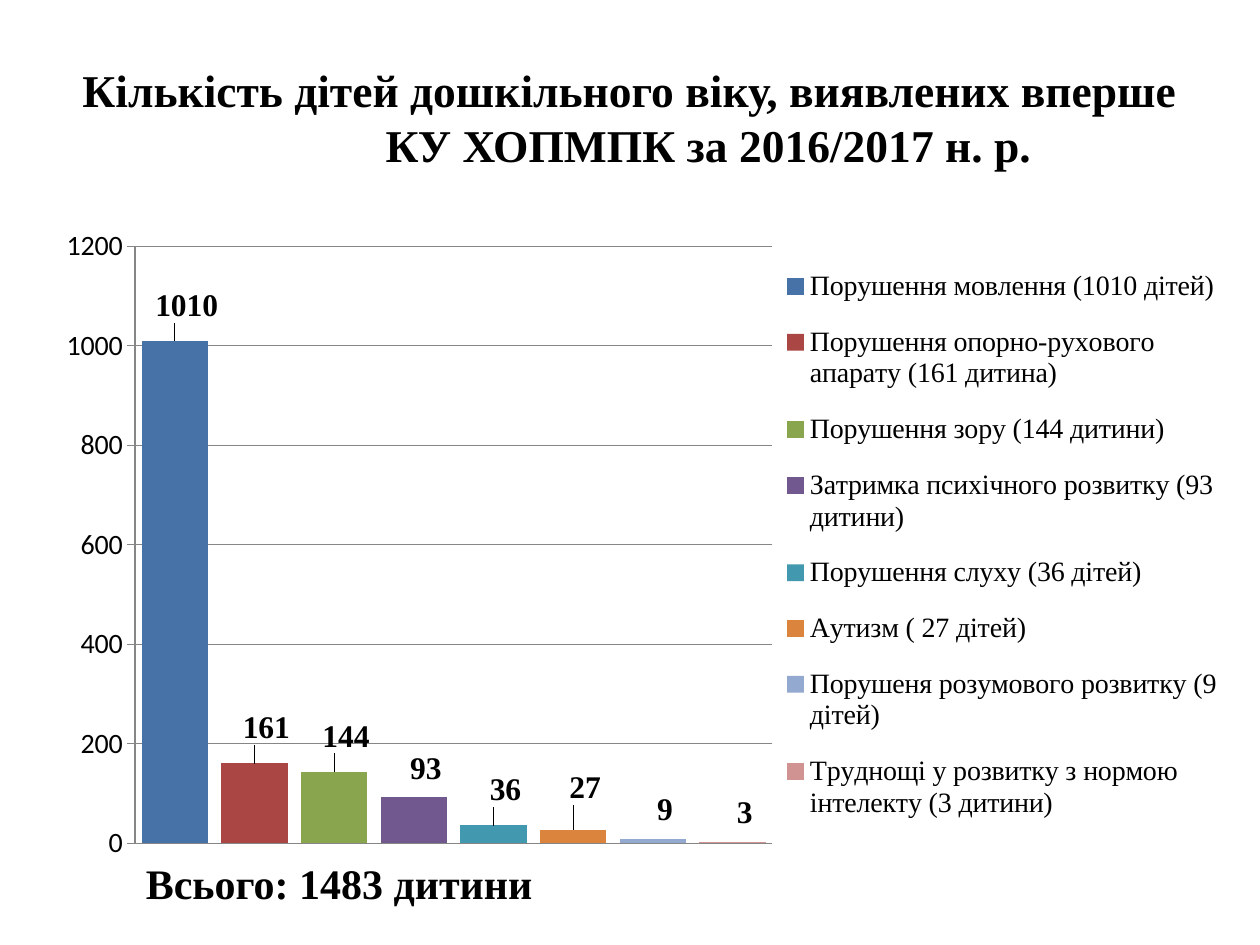
from lxml.etree import SubElement
from pptx import Presentation
from pptx.chart.data import CategoryChartData
from pptx.dml.color import RGBColor
from pptx.enum.chart import XL_CHART_TYPE, XL_LABEL_POSITION, XL_LEGEND_POSITION, XL_TICK_MARK
from pptx.enum.text import MSO_ANCHOR, PP_ALIGN
from pptx.oxml.ns import qn
from pptx.util import Inches, Pt

COLORS = {"text": "000000", "grid": "868686"}
SERIF = "Times New Roman"
TITLE = ["Кількість дітей дошкільного віку, виявлених вперше", "КУ ХОПМПК за 2016/2017 н. р."]
TOTAL = "Всього: 1483 дитини"
# category, value, bar colour, label shift as fractions of the chart
DISORDERS = [
    ("Порушення мовлення (1010 дітей)", 1010, "4672A8", (0.01, -0.02)),
    ("Порушення опорно-рухового апарату (161 дитина)", 161, "AA4643", (0.01, -0.02)),
    ("Порушення зору (144 дитини)", 144, "89A54E", (0.01, -0.02)),
    ("Затримка психічного розвитку (93 дитини)", 93, "71588F", (0.01, -0.01)),
    ("Порушення слуху (36 дітей)", 36, "4298AF", (0.01, -0.02)),
    ("Аутизм ( 27 дітей)", 27, "DB843D", (0.01, -0.03)),
    ("Порушеня розумового розвитку (9 дітей)", 9, "93A9CF", (0.01, -0.01)),
    ("Труднощі у розвитку з нормою інтелекту (3 дитини)", 3, "D19392", (0.01, -0.01)),
]


def style_font(font, size, name=SERIF, bold=False):
    font.size, font.name, font.bold = Pt(size), name, bold
    font.color.rgb = RGBColor.from_string(COLORS["text"])


def add_text(slide, lines, box, size, wrap=True, align=PP_ALIGN.LEFT, anchor=MSO_ANCHOR.TOP):
    tf = slide.shapes.add_textbox(*map(Inches, box)).text_frame
    tf.word_wrap, tf.vertical_anchor = wrap, anchor
    for i, line in enumerate(lines):
        p = tf.paragraphs[0] if i == 0 else tf.add_paragraph()
        p.alignment = align
        r = p.add_run()
        r.text = line
        style_font(r.font, size, bold=True)
    return tf


def set_layout(parent, index, **values):
    for old in parent.findall(qn("c:layout")):
        parent.remove(old)
    layout = SubElement(parent, qn("c:layout"))
    parent.insert(index, layout)
    manual = SubElement(layout, qn("c:manualLayout"))
    for tag, value in values.items():
        SubElement(manual, qn(f"c:{tag}")).set("val", str(value))


def add_disorder_chart(slide):
    data = CategoryChartData()
    data.categories = [name for name, *_ in DISORDERS]
    data.add_series("Series 1", [value for _, value, *_ in DISORDERS])
    box = map(Inches, (0.28, 1.75, 9.53, 5.15))
    chart = slide.shapes.add_chart(XL_CHART_TYPE.COLUMN_CLUSTERED, *box, data).chart
    style_font(chart.font, 18, "Calibri")
    chart.has_title = False
    chart.category_axis.visible = False

    axis = chart.value_axis
    axis.minimum_scale, axis.maximum_scale, axis.major_unit = 0, 1200, 200
    axis.major_tick_mark = XL_TICK_MARK.OUTSIDE
    style_font(axis.tick_labels.font, 16, "Calibri")
    for line in (axis.format.line, axis.major_gridlines.format.line):
        line.color.rgb = RGBColor.from_string(COLORS["grid"])
        line.width = Pt(0.75)

    plot = chart.plots[0]
    plot.gap_width, plot.vary_by_categories = 20, True
    for i, (_, _, color, (dx, dy)) in enumerate(DISORDERS):
        point = plot.series[0].points[i]
        point.format.fill.solid()
        point.format.fill.fore_color.rgb = RGBColor.from_string(color)
        label = point.data_label
        style_font(label.font, 18, bold=True)
        label.position = XL_LABEL_POSITION.OUTSIDE_END
        dlbl = plot.series[0]._element.xpath(f"c:dLbls/c:dLbl[c:idx/@val='{i}']")[0]
        set_layout(dlbl, 1, x=dx, y=dy)

    chart.has_legend = True
    legend = chart.legend
    legend.position, legend.include_in_layout = XL_LEGEND_POSITION.RIGHT, False
    style_font(legend.font, 16)
    set_layout(legend._element, 1, xMode="edge", yMode="edge", x=0.62, y=0.04, w=0.37, h=0.92)
    plot_area = chart._chartSpace.chart.plotArea
    set_layout(plot_area, 0, layoutTarget="inner", xMode="edge", yMode="edge",
               x=0.083, y=0.04, w=0.531, h=0.92)


def main():
    prs = Presentation()
    prs.slide_width, prs.slide_height = Inches(10), Inches(7.5)
    slide = prs.slides.add_slide(prs.slide_layouts[6])
    tf = add_text(slide, TITLE, (0.5, 0.3, 9, 1.25), 26, align=PP_ALIGN.CENTER, anchor=MSO_ANCHOR.MIDDLE)
    tf.paragraphs[1]._p.get_or_add_pPr().set("marL", str(Inches(1.25)))
    add_disorder_chart(slide)
    add_text(slide, [TOTAL], (1.06, 6.76, 3.3, 0.5), 24, wrap=False)
    prs.save("out.pptx")


if __name__ == "__main__":
    main()
